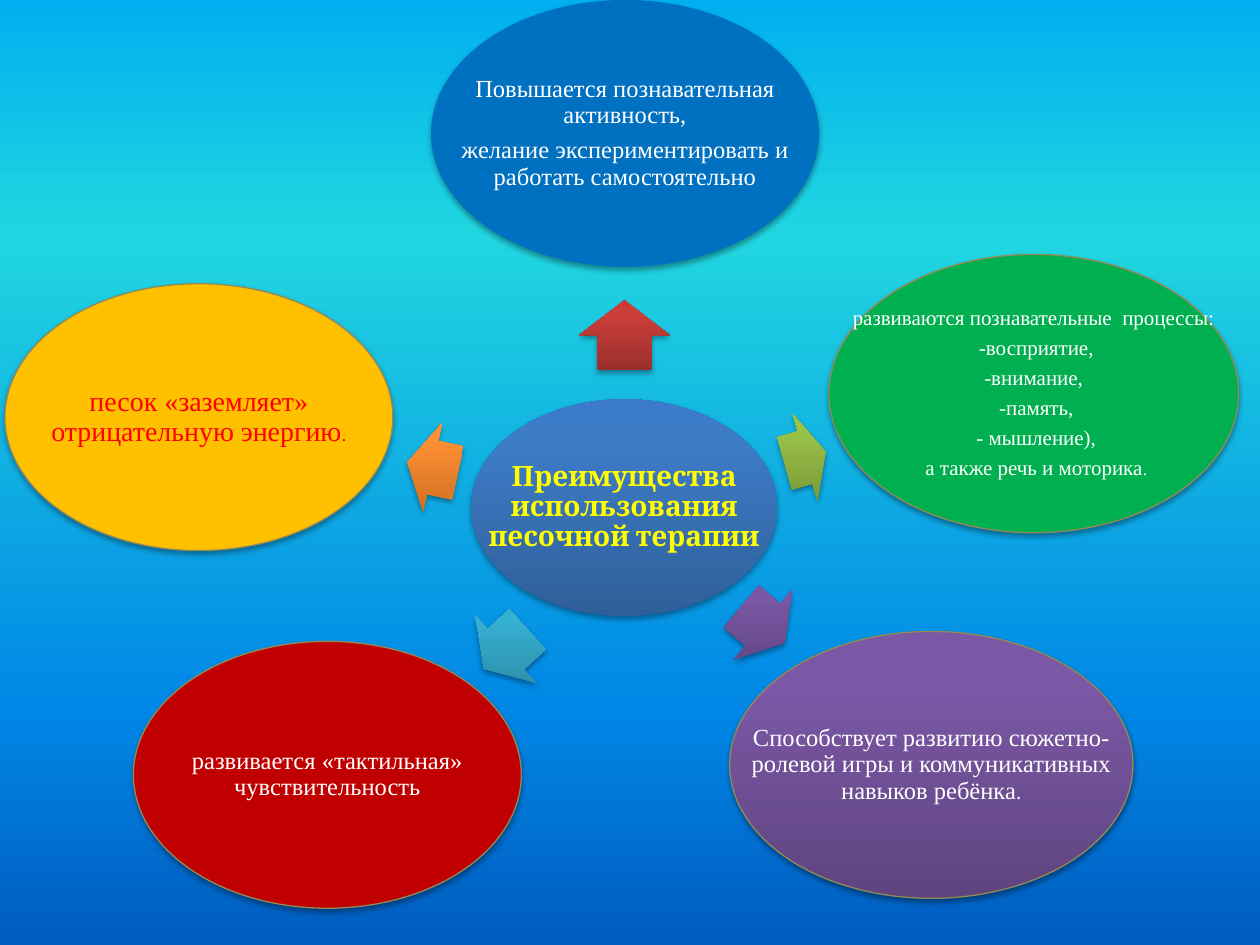
from dataclasses import dataclass

from lxml.etree import SubElement
from pptx import Presentation
from pptx.dml.color import RGBColor as RGB
from pptx.enum.shapes import MSO_SHAPE as Shape
from pptx.enum.text import MSO_ANCHOR as Anchor, MSO_AUTO_SIZE as AutoSize, PP_ALIGN as Align
from pptx.oxml.ns import qn
from pptx.util import Cm, Pt


@dataclass(frozen=True)
class Theme:
    title_font: str = "Cambria"
    body_font: str = "Times New Roman"
    large: int = 16
    medium: int = 14
    small: int = 12
    white: str = "FFFFFF"
    yellow: str = "FFFF00"
    bright_red: str = "FF0000"
    outline: str = "948A54"
    sky: tuple = ((0, "00B0F0"), (25, "21D6E0"), (75, "0087E6"), (100, "005CBF"))
    blue: tuple = ((0, "2F5F99"), (80, "3D7CC7"), (100, "3A7CCB"))
    red: tuple = ((0, "9C2F2D"), (80, "CB3E3A"), (100, "CE3B37"))
    olive: tuple = ((0, "779737"), (80, "9BC348"), (100, "9DC746"))
    purple: tuple = ((0, "5F4480"), (80, "7B58A6"), (100, "7C57A8"))
    teal: tuple = ((0, "2A88A2"), (80, "37B1D2"), (100, "34B4D6"))
    orange: tuple = ((0, "CC6E20"), (80, "FF9034"), (100, "FF9136"))
    azure: str = "0070C0"
    green: str = "00B050"
    crimson: str = "C00000"
    gold: str = "FFC000"


T = Theme()
OVAL_W, OVAL_H, ARROW_H = 7.82, 5.38, 1.83

# Box in cm, fill, outlined, text size, text colour, paragraphs of (text, size of the full stop)
OVALS = [
    ((8.69, 0, OVAL_W, OVAL_H), T.azure, False, T.medium, T.white, [
        ("Повышается познавательная активность,", None),
        ("желание экспериментировать и работать самостоятельно", None)]),
    ((16.71, 5.13, 8.26, 5.61), T.green, True, T.small, T.white, [
        ("развиваются познавательные  процессы:", None),
        (" -восприятие,", None),
        ("-внимание,", None),
        (" -память,", None),
        (" - мышление),", None),
        (" а также речь и моторика", 10)]),
    ((14.71, 12.73, 8.13, OVAL_H), T.purple, True, T.medium, T.white, [
        ("Способствует развитию сюжетно-ролевой игры и коммуникативных навыков ребёнка", 12)]),
    ((2.69, 12.93, OVAL_W, OVAL_H), T.crimson, True, T.medium, T.white, [
        ("развивается «тактильная» чувствительность", None)]),
    ((0.1, 5.72, OVAL_W, OVAL_H), T.gold, True, T.large, T.bright_red, [
        ("песок «заземляет» отрицательную энергию", 11)]),
]

# Box in cm, rotation, fill
ARROWS = [
    ((11.89, 5.84, 1.4, ARROW_H), 270, T.red),
    ((15.8, 8.31, 0.86, ARROW_H), 344.3, T.olive),
    ((14.81, 11.68, 1.14, ARROW_H), 40, T.purple),
    ((9.6, 12.17, 1.19, ARROW_H), 138, T.teal),
    ((8.2, 8.51, 1.04, ARROW_H), 192, T.orange),
]


def paint_gradient(fill, owner, stops, angle):
    """Fill with any number of stops; owner is the element that holds the fill."""
    fill.gradient()
    fill.gradient_angle = angle
    grad = owner.find(".//" + qn("a:gradFill"))
    grad.set("rotWithShape", "0")
    stop_list = grad.find(qn("a:gsLst"))
    for old in list(stop_list):
        stop_list.remove(old)
    for percent, color in stops:
        gs = SubElement(stop_list, qn("a:gs"), pos=str(percent * 1000))
        SubElement(gs, qn("a:srgbClr"), val=color)


def add_shadow(s):
    s.shadow.inherit = False
    effects = s._element.spPr.find(qn("a:effectLst"))
    shadow = SubElement(effects, qn("a:outerShdw"), blurRad=str(Pt(3.1)), dist=str(Pt(1.8)),
                        dir="5400000", rotWithShape="0")
    color = SubElement(shadow, qn("a:srgbClr"), val="000000")
    SubElement(color, qn("a:alpha"), val="35000")


def add_solid(slide, kind, box, fill, outlined=False):
    """Add a shaded preset shape with a plain or gradient fill."""
    s = slide.shapes.add_shape(kind, *map(Cm, box))
    if isinstance(fill, str):
        s.fill.solid()
        s.fill.fore_color.rgb = RGB.from_string(fill)
    else:
        paint_gradient(s.fill, s._element.spPr, fill, 90)
    if outlined:
        s.line.color.rgb = RGB.from_string(T.outline)
        s.line.width = Pt(0.75)
    else:
        s.line.fill.background()
    add_shadow(s)
    return s


def add_run(p, text, size, font, color, bold=False):
    r = p.add_run()
    r.text = text
    for name, value in {"size": Pt(size), "name": font, "bold": bold}.items():
        setattr(r.font, name, value)
    r.font.color.rgb = RGB.from_string(color)


def write(tf, paragraphs, size, font, color, bold=False):
    frame = {"word_wrap": True, "auto_size": AutoSize.NONE, "vertical_anchor": Anchor.MIDDLE}
    frame.update({f"margin_{side}": Cm(0.05) for side in ("left", "top", "right", "bottom")})
    for name, value in frame.items():
        setattr(tf, name, value)
    layout = {"alignment": Align.CENTER, "line_spacing": 0.9,
              "space_before": Pt(0), "space_after": Pt(round(0.35 * size, 2))}
    for i, (text, stop_size) in enumerate(paragraphs):
        p = tf.add_paragraph() if i else tf.paragraphs[0]
        for name, value in layout.items():
            setattr(p, name, value)
        add_run(p, text, size, font, color, bold)
        if stop_size:
            add_run(p, ".", stop_size, font, color, bold)


def add_hub(slide, box):
    """Place the central oval with the slide title over it."""
    add_solid(slide, Shape.OVAL, box, T.blue)
    title = slide.shapes.title
    for name, value in zip(("left", "top", "width", "height"), map(Cm, box)):
        setattr(title, name, value)
    write(title.text_frame, [("Преимущества использования песочной терапии", None)],
          T.large, T.title_font, T.yellow, bold=True)
    slide.shapes._spTree.append(title._element)


def add_benefit(slide, box, fill, outlined, size, color, paragraphs):
    """Place an oval whose text may use its full width."""
    add_solid(slide, Shape.OVAL, box, fill, outlined)
    label = slide.shapes.add_textbox(*map(Cm, box))
    write(label.text_frame, paragraphs, size, T.body_font, color)


def add_arrow(slide, box, rotation, fill):
    s = add_solid(slide, Shape.RIGHT_ARROW, box, fill)
    s.rotation = rotation
    s.adjustments[0], s.adjustments[1] = 0.6, 0.5


def main():
    prs = Presentation()
    prs.slide_width, prs.slide_height = Cm(25.4), Cm(19.05)
    slide = prs.slides.add_slide(prs.slide_layouts[5])
    paint_gradient(slide.background.fill, slide._element, T.sky, 270)
    add_hub(slide, (9.5, 8.05, 6.17, 4.37))
    for arrow, oval in zip(ARROWS, OVALS):
        add_arrow(slide, *arrow)
        add_benefit(slide, *oval)
    prs.save("out.pptx")


if __name__ == "__main__":
    main()
